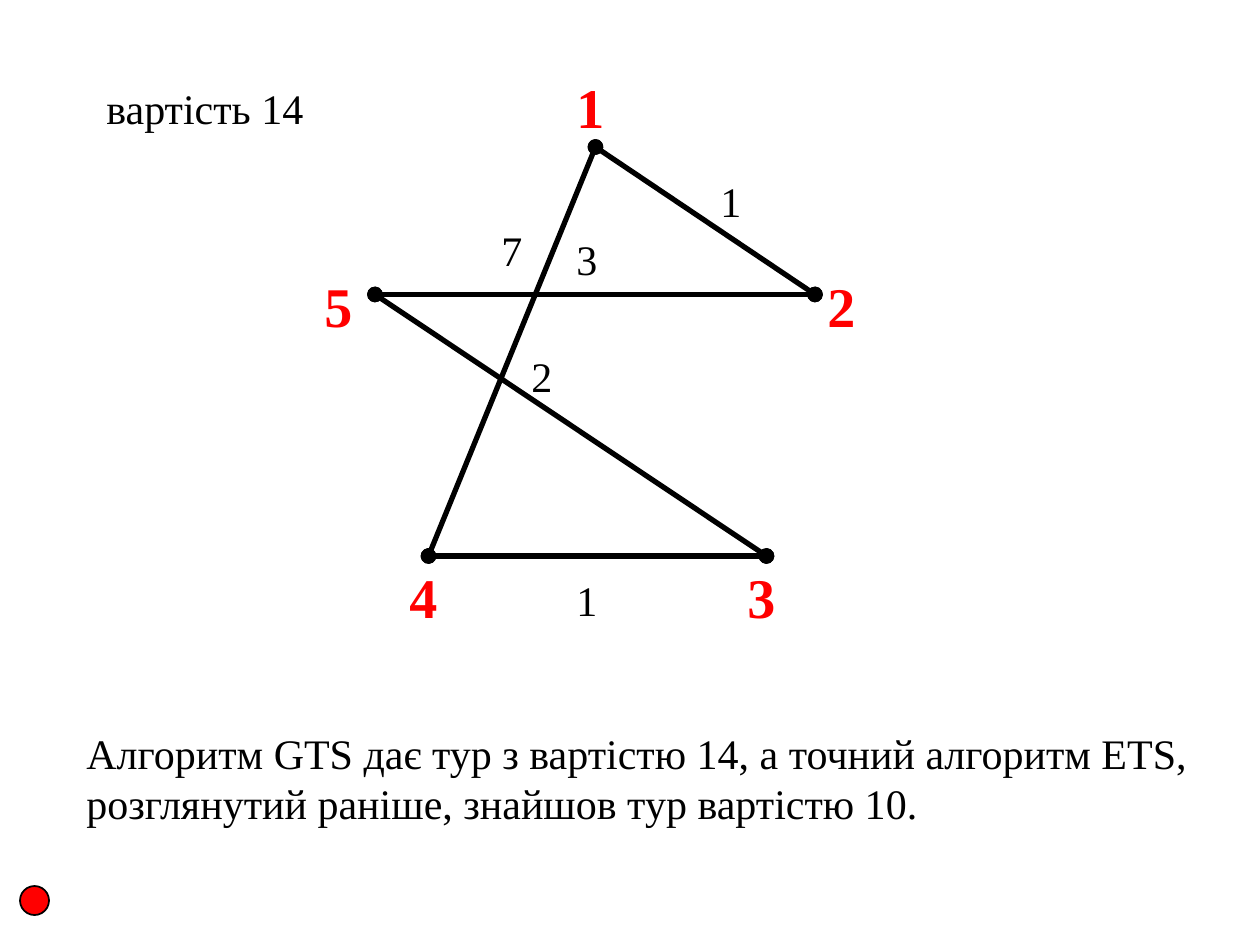
"""Build the slide showing the tour of cost 14 found by the GTS algorithm."""
from dataclasses import dataclass

from lxml import etree
from pptx import Presentation
from pptx.dml.color import RGBColor
from pptx.enum.shapes import MSO_CONNECTOR, MSO_SHAPE
from pptx.enum.text import MSO_ANCHOR, MSO_AUTO_SIZE, PP_ALIGN
from pptx.oxml.ns import qn
from pptx.shapes.autoshape import Shape
from pptx.slide import Slide
from pptx.util import Emu, Pt

RECTANGLE = MSO_SHAPE.RECTANGLE
OVAL = MSO_SHAPE.OVAL
STRAIGHT = MSO_CONNECTOR.STRAIGHT
LEFT = PP_ALIGN.LEFT
JUSTIFY = PP_ALIGN.JUSTIFY
TOP = MSO_ANCHOR.TOP
MIDDLE = MSO_ANCHOR.MIDDLE
GROW = MSO_AUTO_SIZE.SHAPE_TO_FIT_TEXT

BLACK = RGBColor(0x00, 0x00, 0x00)
WHITE = RGBColor(0xFF, 0xFF, 0xFF)
RED = RGBColor(0xFF, 0x00, 0x00)

FONT = "Times New Roman"
PX_PER_INCH = 126
LABEL_WIDTH, LABEL_HEIGHT = 63, 59
SIDE_TOP, SIDE_LEFT, SIDE_BOTTOM, SIDE_RIGHT = range(4)


@dataclass(frozen=True)
class City:
    name: str
    left: int
    top: int
    side: int
    height: int = LABEL_HEIGHT


@dataclass(frozen=True)
class Road:
    start: str
    end: str
    cost: str
    left: int
    top: int


CITIES = [
    City("2", 815, 265, SIDE_LEFT),
    City("1", 564, 66, SIDE_BOTTOM, 81),
    City("5", 312, 265, SIDE_RIGHT),
    City("3", 735, 556, SIDE_TOP),
    City("4", 397, 556, SIDE_TOP),
]
ROADS = [
    Road("2", "5", "3", 564, 227),
    Road("2", "1", "1", 708, 169),
    Road("1", "4", "7", 489, 218),
    Road("3", "5", "2", 519, 344),
    Road("3", "4", "1", 564, 568),
]


def px(length: int) -> Emu:
    """Turn pixels into EMU."""
    return Emu(round(length * 914400 / PX_PER_INCH))


def write(box: Shape, text: str, size: int = 24, color: RGBColor = BLACK,
          bold: bool = False, align: PP_ALIGN = LEFT) -> None:
    """Fill a box with one formatted paragraph."""
    box.text_frame.text = text
    para = box.text_frame.paragraphs[0]
    para.alignment = align
    span = para.runs[0]
    span.font.name = FONT
    span.font.size = Pt(size)
    span.font.bold = bold
    span.font.color.rgb = color


def add_label(page: Slide, left: int, top: int, height: int = LABEL_HEIGHT) -> Shape:
    """Add a white rectangle for a number."""
    box = page.shapes.add_shape(RECTANGLE, px(left), px(top), px(LABEL_WIDTH), px(height))
    box.shadow.inherit = False
    box.fill.solid()
    box.fill.fore_color.rgb = WHITE
    box.line.fill.background()
    box.text_frame.vertical_anchor = TOP
    return box


def add_city(page: Slide, city: City) -> Shape:
    """Add the red number of a city."""
    box = add_label(page, city.left, city.top, city.height)
    write(box, city.name, 32, RED, True)
    return box


def add_road(page: Slide, road: Road, boxes: dict[str, Shape], sides: dict[str, int]) -> None:
    """Add a cost and the line that joins two cities."""
    write(add_label(page, road.left, road.top), road.cost)
    line = page.shapes.add_connector(STRAIGHT, 0, 0, 0, 0)
    line.begin_connect(boxes[road.start], sides[road.start])
    line.end_connect(boxes[road.end], sides[road.end])
    line.line.color.rgb = BLACK
    line.line.width = Pt(3)
    outline = line.line._get_or_add_ln()
    for end in ("a:headEnd", "a:tailEnd"):
        etree.SubElement(outline, qn(end), type="oval")
    etree.SubElement(line._element.spPr, qn("a:effectLst"))


def add_text(page: Slide, text: str, left: int, top: int, width: int, height: int,
             wrap: bool, align: PP_ALIGN, anchor: MSO_ANCHOR) -> None:
    """Add a text box that grows with its text."""
    box = page.shapes.add_textbox(px(left), px(top), px(width), px(height))
    write(box, text, align=align)
    box.text_frame.word_wrap = wrap
    box.text_frame.auto_size = GROW
    box.text_frame.vertical_anchor = anchor


def add_marker(page: Slide) -> None:
    """Add the red dot in the corner."""
    dot = page.shapes.add_shape(OVAL, px(20), px(886), px(29), px(29))
    dot.shadow.inherit = False
    dot.fill.solid()
    dot.fill.fore_color.rgb = RED
    dot.line.color.rgb = BLACK
    dot.line.width = Pt(1)


def main() -> None:
    """Build and save the deck."""
    deck = Presentation()
    deck.slide_width, deck.slide_height = px(1260), px(945)
    page = deck.slides.add_slide(deck.slide_layouts[6])
    boxes = {city.name: add_city(page, city) for city in CITIES}
    sides = {city.name: city.side for city in CITIES}
    for road in ROADS:
        add_road(page, road, boxes, sides)
    add_text(page, "вартість 14", 94, 76, 223, 63, False, JUSTIFY, MIDDLE)
    add_text(page, "Алгоритм GTS дає тур з вартістю 14, а точний алгоритм ETS, "
             "розглянутий раніше, знайшов тур вартістю 10.",
             74, 721, 1160, 115, True, LEFT, TOP)
    add_marker(page)
    deck.save("out.pptx")


if __name__ == "__main__":
    main()
